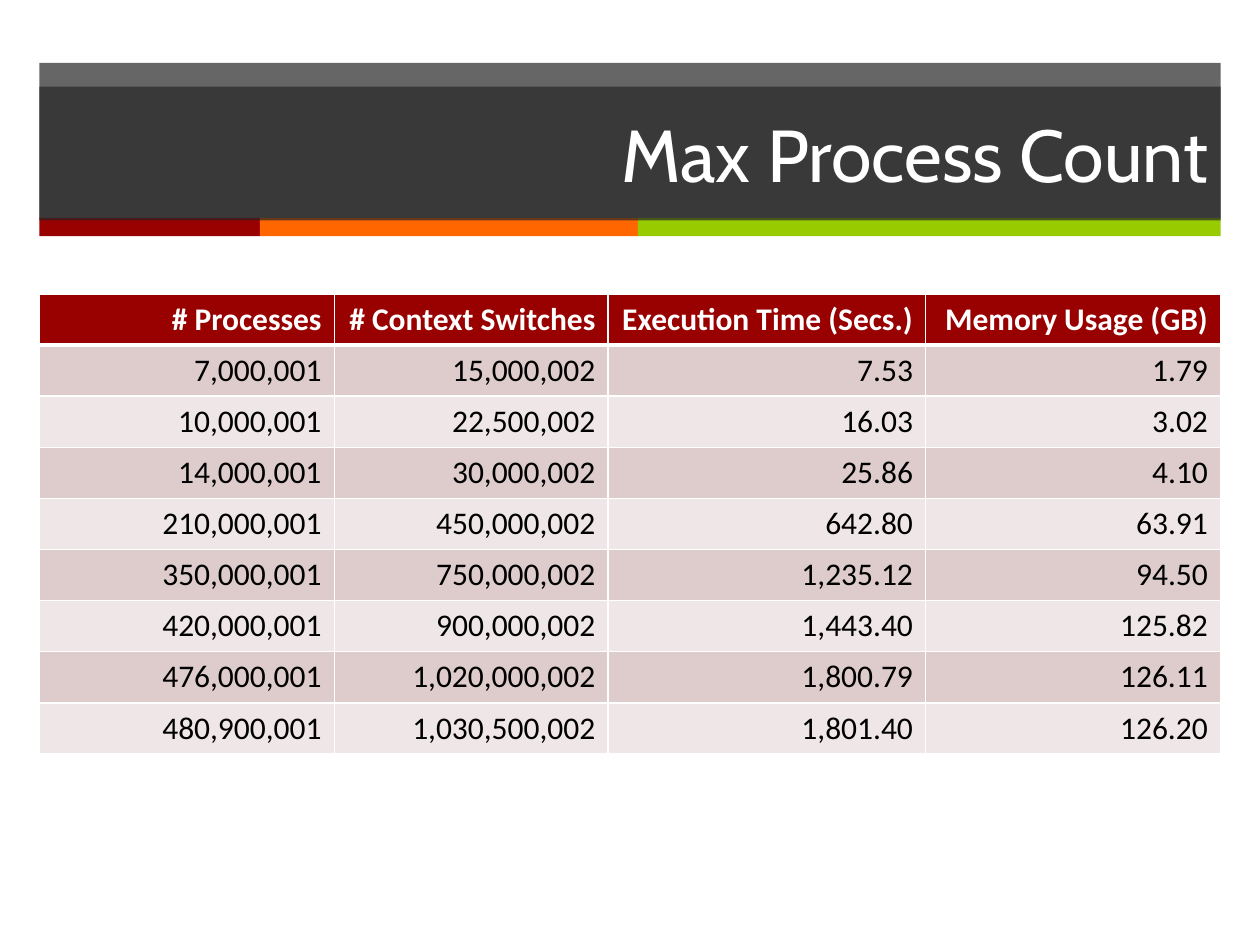
from lxml import etree
from pptx import Presentation
from pptx.dml.color import RGBColor
from pptx.enum.shapes import MSO_SHAPE
from pptx.enum.text import MSO_ANCHOR, PP_ALIGN
from pptx.oxml.ns import qn
from pptx.util import Pt

RECTANGLE = MSO_SHAPE.RECTANGLE
MIDDLE = MSO_ANCHOR.MIDDLE
RIGHT = PP_ALIGN.RIGHT

TITLE_ONLY_LAYOUT = 5
LEFT, WIDTH = 22.5, 675
CHARCOAL, WHITE, BLACK, DARK_RED = "262626", "FFFFFF", "000000", "990000"
BAND_OPACITY = 70
ROW_FILLS = ("DECCCC", "EFE7E7")
STRIPES = ((126, DARK_RED), (216, "FF6600"), (333, "99CC00"))
COLUMN_WIDTHS = (168.5, 156.5, 181.5, 168.5)
ROW_HEIGHT = 29.2
RESULTS = (
    ("# Processes", "# Context Switches", "Execution Time (Secs.)", "Memory Usage (GB)"),
    ("7,000,001", "15,000,002", "7.53", "1.79"),
    ("10,000,001", "22,500,002", "16.03", "3.02"),
    ("14,000,001", "30,000,002", "25.86", "4.10"),
    ("210,000,001", "450,000,002", "642.80", "63.91"),
    ("350,000,001", "750,000,002", "1,235.12", "94.50"),
    ("420,000,001", "900,000,002", "1,443.40", "125.82"),
    ("476,000,001", "1,020,000,002", "1,800.79", "126.11"),
    ("480,900,001", "1,030,500,002", "1,801.40", "126.20"),
)


def set_fill(fill, color, opacity=100):
    fill.solid()
    fill.fore_color.rgb = RGBColor.from_string(color)
    if opacity < 100:
        # The solid fill was just added to the shape, ahead of any line colour.
        etree.SubElement(fill._xPr.find(qn("a:solidFill"))[0], qn("a:alpha"),
                         val=str(opacity * 1000))


def add_text(paragraph, text, font_name, size, color, bold=False):
    paragraph.alignment = RIGHT
    run = paragraph.add_run()
    run.text = text
    run.font.name = font_name
    run.font.size = Pt(size)
    run.font.bold = bold
    set_fill(run.font.fill, color)


def add_bar(slide, left, top, width, height, color, opacity=100):
    bar = slide.shapes.add_shape(RECTANGLE, Pt(left), Pt(top), Pt(width), Pt(height))
    bar.shadow.inherit = False
    bar.line.fill.background()
    set_fill(bar.fill, color, opacity)


def add_header_bars(slide):
    add_bar(slide, LEFT, 36, WIDTH, 89, CHARCOAL, BAND_OPACITY)
    left = LEFT
    for width, color in STRIPES:
        add_bar(slide, left, 124.5, width, 10.5, color)
        left += width


def add_title(slide, text):
    """Fill the title placeholder and bring it in front of the bars."""
    title = slide.shapes.title
    title.left, title.top = Pt(LEFT), Pt(49.5)
    title.width, title.height = Pt(WIDTH), Pt(76.5)
    set_fill(title.fill, CHARCOAL, BAND_OPACITY)
    title.text_frame.vertical_anchor = MIDDLE
    add_text(title.text_frame.paragraphs[0], text, "Cabin", 42, WHITE)
    slide.shapes.element.append(title.element)


def set_borders(cell, bottom_width):
    """Draw white borders; they must precede the fill in the cell properties."""
    properties = cell._tc.get_or_add_tcPr()
    widths = (("a:lnL", 1), ("a:lnR", 1), ("a:lnT", 1), ("a:lnB", bottom_width))
    for position, (tag, width) in enumerate(widths):
        border = etree.Element(qn(tag), w=str(Pt(width)))
        border_fill = etree.SubElement(border, qn("a:solidFill"))
        etree.SubElement(border_fill, qn("a:srgbClr"), val=WHITE)
        properties.insert(position, border)


def add_results_table(slide):
    table = slide.shapes.add_table(
        len(RESULTS), len(COLUMN_WIDTHS), Pt(LEFT), Pt(168),
        Pt(WIDTH), Pt(ROW_HEIGHT * len(RESULTS))).table
    for column, width in zip(table.columns, COLUMN_WIDTHS):
        column.width = Pt(width)
    for row_index, values in enumerate(RESULTS):
        is_header = row_index == 0
        row_fill = DARK_RED if is_header else ROW_FILLS[(row_index - 1) % 2]
        table.rows[row_index].height = Pt(ROW_HEIGHT)
        for cell, value in zip(table.rows[row_index].cells, values):
            set_fill(cell.fill, row_fill)
            set_borders(cell, 3 if is_header else 1)
            add_text(cell.text_frame.paragraphs[0], value, "Calibri", 18,
                     WHITE if is_header else BLACK, is_header)


def main():
    presentation = Presentation()
    presentation.slide_width, presentation.slide_height = Pt(720), Pt(540)
    slide = presentation.slides.add_slide(presentation.slide_layouts[TITLE_ONLY_LAYOUT])
    add_header_bars(slide)
    add_title(slide, "Max Process Count")
    add_results_table(slide)
    presentation.save("out.pptx")


if __name__ == "__main__":
    main()
